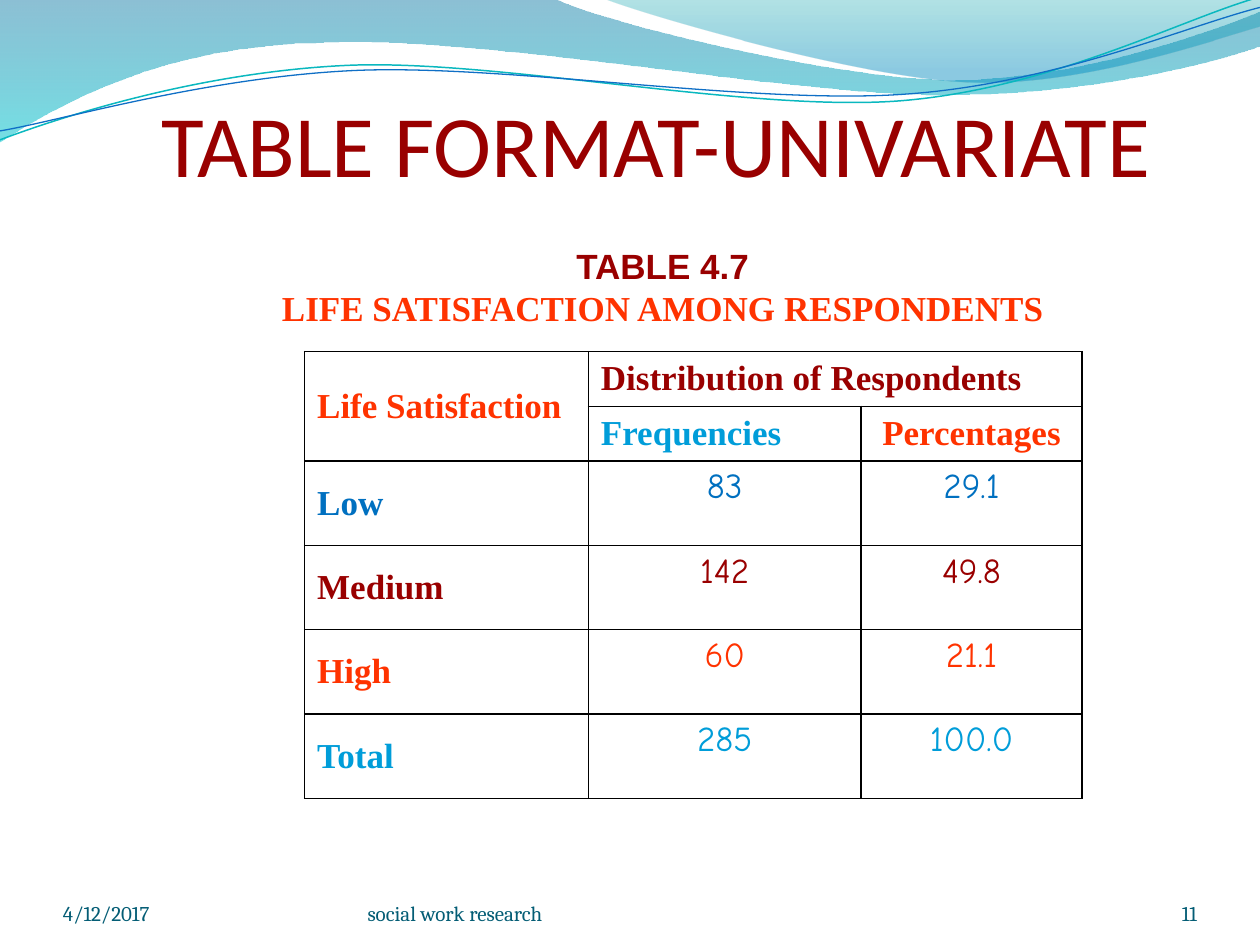
from dataclasses import dataclass
from typing import Optional

from lxml import etree
from pptx import Presentation
from pptx.dml.color import RGBColor
from pptx.enum import text
from pptx.oxml.ns import qn
from pptx.util import Cm, Pt

MAROON, RED, SKY, BLUE, TEAL = "990000", "FF3300", "009DD9", "0070C0", "045D75"
SERIF, HAND = "Times New Roman", "Comic Neue"
LEFT, CENTER, RIGHT = text.PP_ALIGN.LEFT, text.PP_ALIGN.CENTER, text.PP_ALIGN.RIGHT
TOP, MIDDLE, BOTTOM = text.MSO_ANCHOR.TOP, text.MSO_ANCHOR.MIDDLE, text.MSO_ANCHOR.BOTTOM


@dataclass
class Stop:
    position: float
    color: str
    opacity: int


@dataclass
class Wave:
    """Steps after start are in cm: two numbers make a line, six a cubic curve."""
    start: tuple
    steps: list
    stops: Optional[list] = None
    color: str = ""
    weight: float = 0
    rotation: float = 0


@dataclass
class Label:
    words: str
    color: str
    font: str = SERIF
    size: float = 20
    bold: bool = True
    align: int = LEFT


@dataclass
class Box:
    left: float
    top: float
    width: float
    height: float
    anchor: int
    labels: list


WAVES = [
    Wave((0, -0.03), [(11.18, -0.03),
                      (12.09, 0.43, 16.87, 1.6, 19.25, 1.6),
                      (21.66, 1.6, 24.33, 0.66, 25.4, 0.23),
                      (25.43, 0.91),
                      (24.97, 1.12, 22.1, 1.93, 18.95, 1.91),
                      (15.8, 1.91, 9.7, 0.71, 6.53, 0.86),
                      (3.28, 0.89, 1.17, 2.11, -0.03, 2.87)],
         stops=[Stop(0, "0074A1", 45), Stop(1, "00C6CF", 55)]),
    Wave((12.17, -0.03), [(12.93, 0.28, 17.32, 1.57, 19.53, 1.65),
                          (21.74, 1.75, 24.41, 0.81, 25.4, 0.53),
                          (25.4, 0)],
         stops=[Stop(0, "00A1A9", 30), Stop(0.8, "008BBF", 45)]),
    Wave((-0.05, 2.22), [(1.19, 1.82, 4.02, 1.04, 7.05, 1.05),
                         (10.05, 1.07, 15.02, 2.37, 18.08, 2.29),
                         (21.13, 2.2, 23.86, 0.91, 25.41, 0.55)],
         color="0AB8BF", weight=0.85, rotation=357.3),
    Wave((-0.04, 2.04), [(1.16, 1.9, 4.17, 1.15, 7.2, 1.16),
                         (10.25, 1.18, 15.13, 2.23, 18.19, 2.16),
                         (21.22, 2.1, 23.93, 1.06, 25.45, 0.75)],
         color="0F6FC6", weight=0.75, rotation=357.3),
]

CAPTION = Box(4.98, 4.93, 16.76, 2.54, TOP, [
    Label("TABLE 4.7", MAROON, "Arial", align=CENTER),
    Label("LIFE SATISFACTION AMONG RESPONDENTS", RED, align=CENTER)])


def footer(left: float, width: float, words: str, align: int = LEFT) -> Box:
    label = Label(words, TEAL, "Cambria", 12, False, align)
    return Box(left, 17.65, width, 1.02, BOTTOM, [label])


FOOTERS = [footer(1.27, 5.92, "4/12/2017"),
           footer(22.02, 2.11, "11", RIGHT),
           footer(7.41, 9.32, "social work research")]

HEADERS = {(0, 0): Label("Life Satisfaction", RED),
           (0, 1): Label("Distribution of Respondents", MAROON),
           (1, 1): Label("Frequencies", SKY),
           (1, 2): Label("Percentages", RED, align=CENTER)}
RESULTS = [("Low", "83", "29.1", BLUE), ("Medium", "142", "49.8", MAROON),
           ("High", "60", "21.1", RED), ("Total", "285", "100.0", SKY)]
COLUMNS = [5.72, 5.5, 4.45]
ROWS = [1] * 2 + [1.7] * len(RESULTS)


def rgb(value: str) -> RGBColor:
    return RGBColor.from_string(value)


def write(p, label: Label) -> None:
    p.text, p.alignment = label.words, label.align
    p.font.name, p.font.size, p.font.bold = label.font, Pt(label.size), label.bold
    p.font.color.rgb = rgb(label.color)


def bend(sp, steps: list) -> None:
    """Turn each three line segments that stand for a curve into one cubic."""
    segments = iter(list(sp._element.spPr.iter(qn("a:lnTo"))))
    for step in steps:
        first = next(segments)
        if len(step) == 6:
            curve = etree.Element(qn("a:cubicBezTo"))
            first.addprevious(curve)
            for segment in (first, next(segments), next(segments)):
                curve.append(segment[0])
                segment.getparent().remove(segment)


def draw_wave(s, wave: Wave) -> None:
    x, y = wave.start
    points = [(Cm(step[i]), Cm(step[i + 1]))
              for step in wave.steps for i in range(0, len(step), 2)]
    builder = s.shapes.build_freeform(Cm(x), Cm(y))
    builder.add_line_segments(points, close=bool(wave.stops))
    sp = builder.convert_to_shape()
    bend(sp, wave.steps)
    sp.rotation = wave.rotation
    sp.shadow.inherit = False
    if not wave.stops:
        sp.fill.background()
        sp.line.color.rgb = rgb(wave.color)
        sp.line.width = Pt(wave.weight)
        return
    sp.line.fill.background()
    sp.fill.gradient()
    sp.fill.gradient_angle = 270
    for target, stop in zip(sp.fill.gradient_stops, wave.stops):
        target.position = stop.position
        target.color.rgb = rgb(stop.color)
    for clr, stop in zip(sp._element.spPr.iter(qn("a:srgbClr")), wave.stops):
        etree.SubElement(clr, qn("a:alpha"), val=str(stop.opacity * 1000))


def draw_box(s, box: Box) -> None:
    sp = s.shapes.add_textbox(Cm(box.left), Cm(box.top), Cm(box.width), Cm(box.height))
    tf = sp.text_frame
    tf.word_wrap, tf.vertical_anchor = True, box.anchor
    tf.margin_left = tf.margin_top = tf.margin_right = tf.margin_bottom = 0
    for i, label in enumerate(box.labels):
        write(tf.add_paragraph() if i else tf.paragraphs[0], label)


def draw_title(s) -> None:
    title = s.shapes.title
    title.left, title.top, title.width, title.height = Cm(1.27), Cm(0.76), Cm(22.86), Cm(3.18)
    tf = title.text_frame
    tf.auto_size, tf.vertical_anchor = text.MSO_AUTO_SIZE.NONE, BOTTOM
    tf.margin_top = Cm(0.13)
    tf.margin_left = tf.margin_right = tf.margin_bottom = 0
    p = tf.paragraphs[0]
    write(p, Label("TABLE FORMAT-UNIVARIATE", MAROON, "Calibri", 50, False))
    p._p.get_or_add_pPr().set("indent", str(Cm(1.98)))
    s.shapes._spTree.append(title._element)


def add_borders(cell) -> None:
    tc_pr = cell._tc.get_or_add_tcPr()
    for i, side in enumerate(("lnL", "lnR", "lnT", "lnB")):
        ln = etree.Element(qn(f"a:{side}"), w=str(Pt(1)))
        fill = etree.SubElement(ln, qn("a:solidFill"))
        etree.SubElement(fill, qn("a:srgbClr"), val="000000")
        tc_pr.insert(i, ln)


def draw_table(s) -> None:
    frame = s.shapes.add_table(len(ROWS), len(COLUMNS), Cm(6.14), Cm(7.09),
                               Cm(sum(COLUMNS)), Cm(sum(ROWS)))
    table = frame.table
    table.first_row = table.horz_banding = False
    for column, width in zip(table.columns, COLUMNS):
        column.width = Cm(width)
    for row, height in zip(table.rows, ROWS):
        row.height = Cm(height)
    frame.height = Cm(8.99)
    for cell in table.iter_cells():
        cell.fill.background()
        add_borders(cell)
    table.cell(0, 0).merge(table.cell(1, 0))
    table.cell(0, 1).merge(table.cell(0, 2))

    labels = dict(HEADERS)
    for r, (level, count, percent, color) in enumerate(RESULTS, 2):
        labels[r, 0] = Label(level, color)
        for c, number in enumerate((count, percent), 1):
            labels[r, c] = Label(number, color, HAND, bold=False, align=CENTER)
    for (r, c), label in labels.items():
        cell = table.cell(r, c)
        cell.vertical_anchor = TOP if label.font == HAND else MIDDLE
        write(cell.text_frame.paragraphs[0], label)


def main() -> None:
    prs = Presentation()
    prs.slide_width, prs.slide_height = Cm(25.4), Cm(19.05)
    s = prs.slides.add_slide(prs.slide_layouts[5])
    for wave in WAVES:
        draw_wave(s, wave)
    draw_title(s)
    draw_box(s, CAPTION)
    draw_table(s)
    for box in FOOTERS:
        draw_box(s, box)
    prs.save("out.pptx")


if __name__ == "__main__":
    main()
